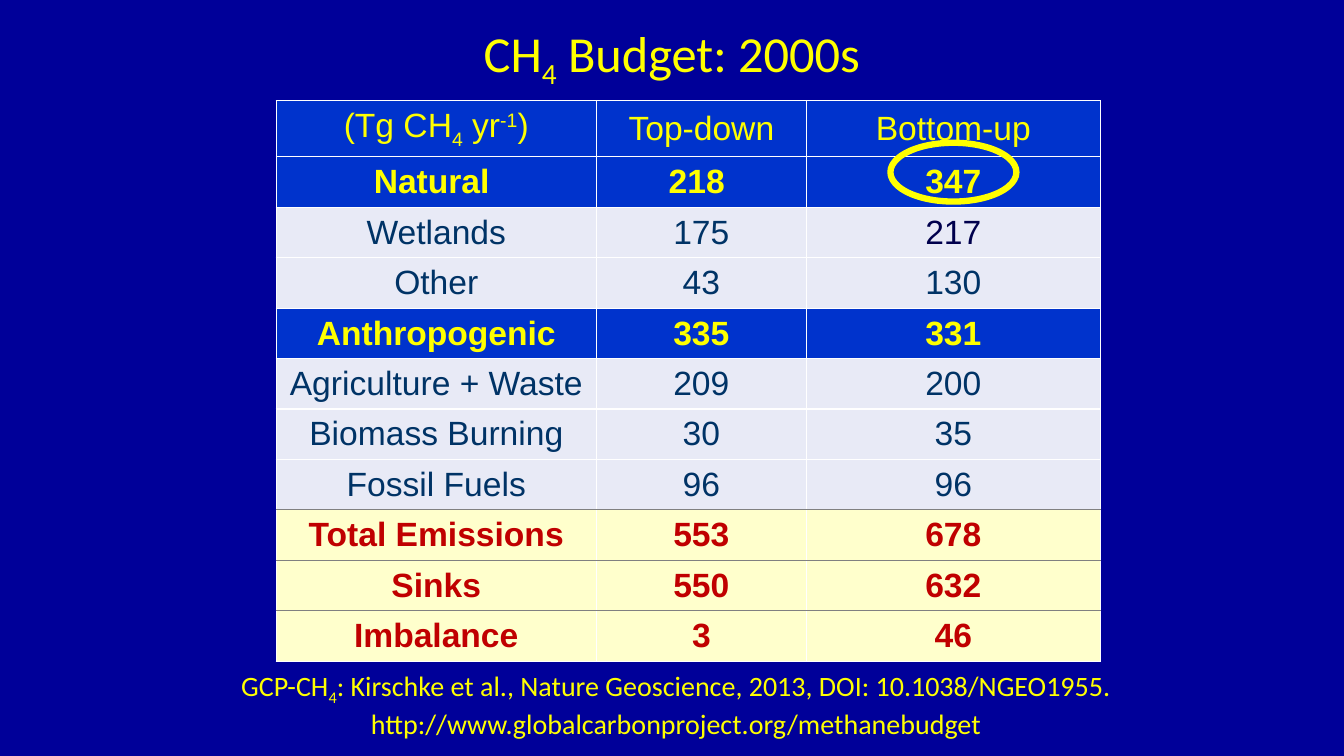
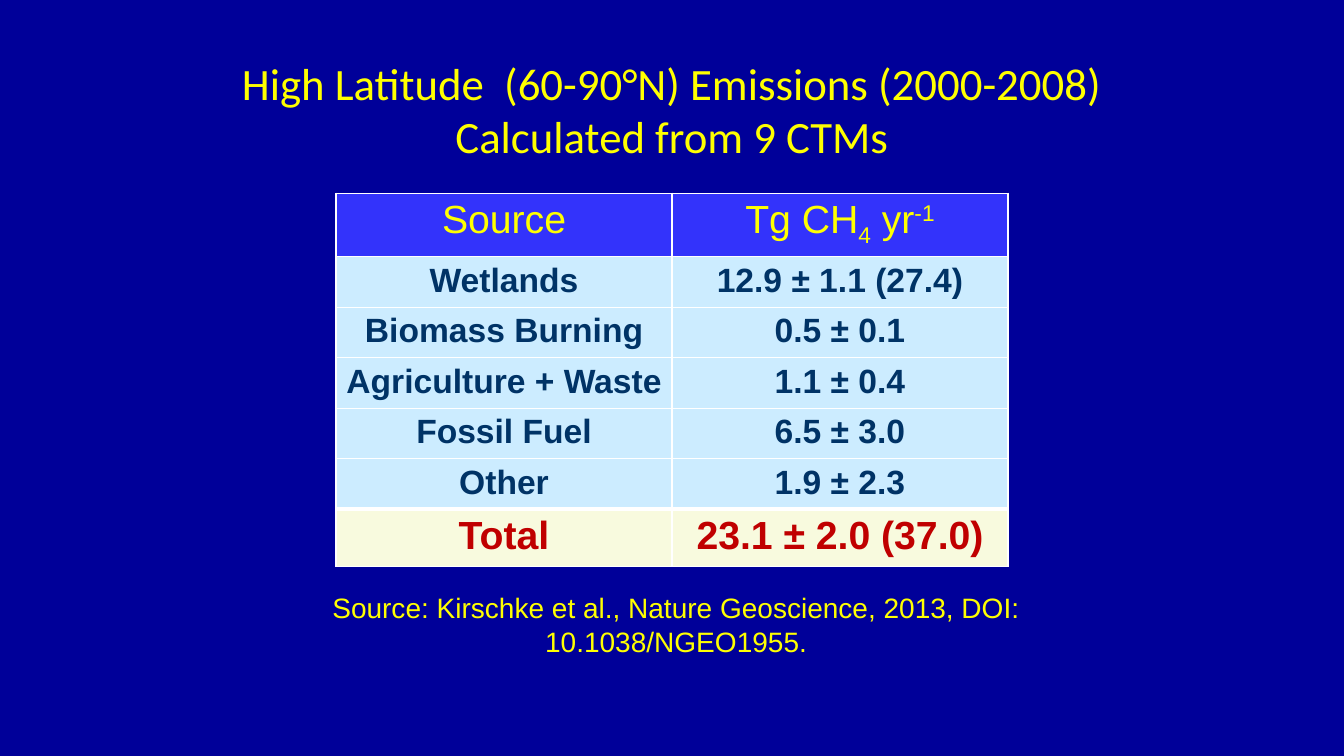
"""Build two slides with tables of methane budgets and emissions."""
import pptx
import pptx.dml.color
import pptx.enum.shapes
import pptx.enum.text
import pptx.oxml
import pptx.oxml.ns
import pptx.util

PX = 9525
C = {
    "back": "000099", "yellow": "FFFF00", "white": "FFFFFF", "grey": "808080",
    "navy": "003366", "midnight": "00004C", "red": "C00000",
    "blue": "0033CC", "pale": "E8EAF6", "cream": "FFFFCC",
    "violet": "3333FB", "sky": "CCECFF", "ivory": "F8FADE",
}
RGB = {name: pptx.dml.color.RGBColor.from_string(value) for name, value in C.items()}
BASELINES = {"_": "-25000", "^": "30000"}


def write(tf, text, size=24, color="yellow", font="Arial", bold=False):
    """Fill a frame; | parts runs, _ leads a subscript and ^ a superscript."""
    tf.word_wrap = True
    for i, line in enumerate(text.split("\n")):
        p = tf.add_paragraph() if i else tf.paragraphs[0]
        p.alignment = pptx.enum.text.PP_ALIGN.CENTER
        for part in line.split("|"):
            r = p.add_run()
            r.text = part.lstrip("_^")
            r.font.size = pptx.util.Pt(size)
            r.font.name = font
            r.font.bold = bold
            r.font.color.rgb = RGB[color]
            if part[0] in BASELINES:
                r.font._element.set("baseline", BASELINES[part[0]])


def add_table(s, x, y, widths, heights, rows, styles, anchor):
    """Add a table; a style is fill, text format, and top and bottom borders."""
    frame = s.shapes.add_table(len(rows), len(widths), x * PX, y * PX,
                               sum(widths) * PX, sum(heights) * PX)
    table = frame.table
    table.horz_banding = False
    for column, width in zip(table.columns, widths):
        column.width = width * PX
    for i, (style, *texts) in enumerate(rows):
        table.rows[i].height = heights[i] * PX
        fill, text_format, top, bottom = styles[style]
        for j, text in enumerate(texts):
            cell = table.cell(i, j)
            cell.vertical_anchor = anchor
            tcPr = cell._tc.get_or_add_tcPr()
            for side, (color, weight) in zip("LRTB", (THIN, THIN, top, bottom)):
                tcPr.append(pptx.oxml.parse_xml(
                    f'<a:ln{side} {pptx.oxml.ns.nsdecls("a")} w="{weight * 12700}">'
                    f'<a:solidFill><a:srgbClr val="{C[color]}"/></a:solidFill></a:ln{side}>'))
            cell.fill.solid()
            cell.fill.fore_color.rgb = RGB[fill]
            write(cell.text_frame, text, **text_format)
    return table


THIN, THICK, GREY = ("white", 1), ("white", 3), ("grey", 1)
ANCHOR = pptx.enum.text.MSO_ANCHOR

prs = pptx.Presentation()
prs.slide_width, prs.slide_height = 1280 * PX, 720 * PX

slides = [
    [(263, 16, 754, 68, "CH|_4| Budget: 2000s", {"size": 36, "font": "Calibri"}),
     (216, 632, 856, 74,
      "GCP-CH|_4|: Kirschke et al., Nature Geoscience, 2013, DOI: 10.1038/NGEO1955.\n"
      "http://www.globalcarbonproject.org/methanebudget",
      {"size": 20, "font": "Calibri"})],
    [(208, 48, 864, 113,
      "High Latitude  (60-90°N) Emissions (2000-2008)\nCalculated from 9 CTMs",
      {"size": 32, "font": "Calibri"}),
     (216, 558, 856, 74,
      "Source: Kirschke et al., Nature Geoscience, 2013, DOI: 10.1038/NGEO1955.",
      {"size": 20})],
]
for boxes in slides:
    s = prs.slides.add_slide(prs.slide_layouts[6])
    s.background.fill.solid()
    s.background.fill.fore_color.rgb = RGB["back"]
    for x, y, w, h, text, text_format in boxes:
        sp = s.shapes.add_textbox(x * PX, y * PX, w * PX, h * PX)
        write(sp.text_frame, text, **text_format)
budget, latitude = prs.slides

budget_styles = {
    "head": ("blue", {}, THIN, THIN),
    "group": ("blue", {"bold": True}, THIN, THIN),
    "item": ("pale", {"color": "navy"}, THIN, THIN),
    "last": ("pale", {"color": "navy"}, THIN, GREY),
    "total": ("cream", {"color": "red", "bold": True}, GREY, GREY),
    "end": ("cream", {"color": "red", "bold": True}, GREY, THIN),
}
budget_rows = [
    ("head", "(Tg CH|_4| yr|^-1|)", "Top-down", "Bottom-up"),
    ("group", "Natural ", "218 ", "347"),
    ("item", "Wetlands", "175", "217"),
    ("item", "Other", "43", "130"),
    ("group", "Anthropogenic", "335", "331"),
    ("item", "Agriculture + Waste", "209", "200"),
    ("item", "Biomass Burning", "30", "35"),
    ("last", "Fossil Fuels", "96", "96"),
    ("total", "Total Emissions", "553", "678"),
    ("total", "Sinks", "550", "632"),
    ("end", "Imbalance", "3", "46"),
]
table = add_table(budget, 263, 96, [305, 200, 280], [53] + [48] * 10,
                  budget_rows, budget_styles, ANCHOR.MIDDLE)
wetlands = table.cell(2, 2).text_frame.paragraphs[0].runs[0]
wetlands.font.color.rgb = RGB["midnight"]

sp = budget.shapes.add_shape(pptx.enum.shapes.MSO_SHAPE.OVAL,
                             848 * PX, 136 * PX, 120 * PX, 56 * PX)
sp.shadow.inherit = False
sp.fill.background()
sp.line.color.rgb = RGB["yellow"]
sp.line.width = pptx.util.Pt(4.5)

latitude_styles = {
    "head": ("violet", {"size": 28}, THIN, THIN),
    "item": ("sky", {"color": "navy", "bold": True}, THIN, THIN),
    "last": ("sky", {"color": "navy", "bold": True}, THIN, THICK),
    "total": ("ivory", {"size": 28, "color": "red", "bold": True}, THICK, THIN),
}
latitude_rows = [
    ("head", "Source", "Tg CH|_4| yr|^-1"),
    ("item", "Wetlands", "12.9 ± 1.1 (27.4)"),
    ("item", "Biomass Burning", "0.5 ± 0.1"),
    ("item", "Agriculture + Waste", "1.1 ± 0.4"),
    ("item", "Fossil Fuel", "6.5 ± 3.0"),
    ("last", "Other", "1.9 ± 2.3"),
    ("total", "Total", "23.1 ± 2.0 (37.0)"),
]
add_table(latitude, 320, 184, [320, 320], [60] + [48] * 5 + [55],
          latitude_rows, latitude_styles, ANCHOR.TOP)

prs.save("out.pptx")
